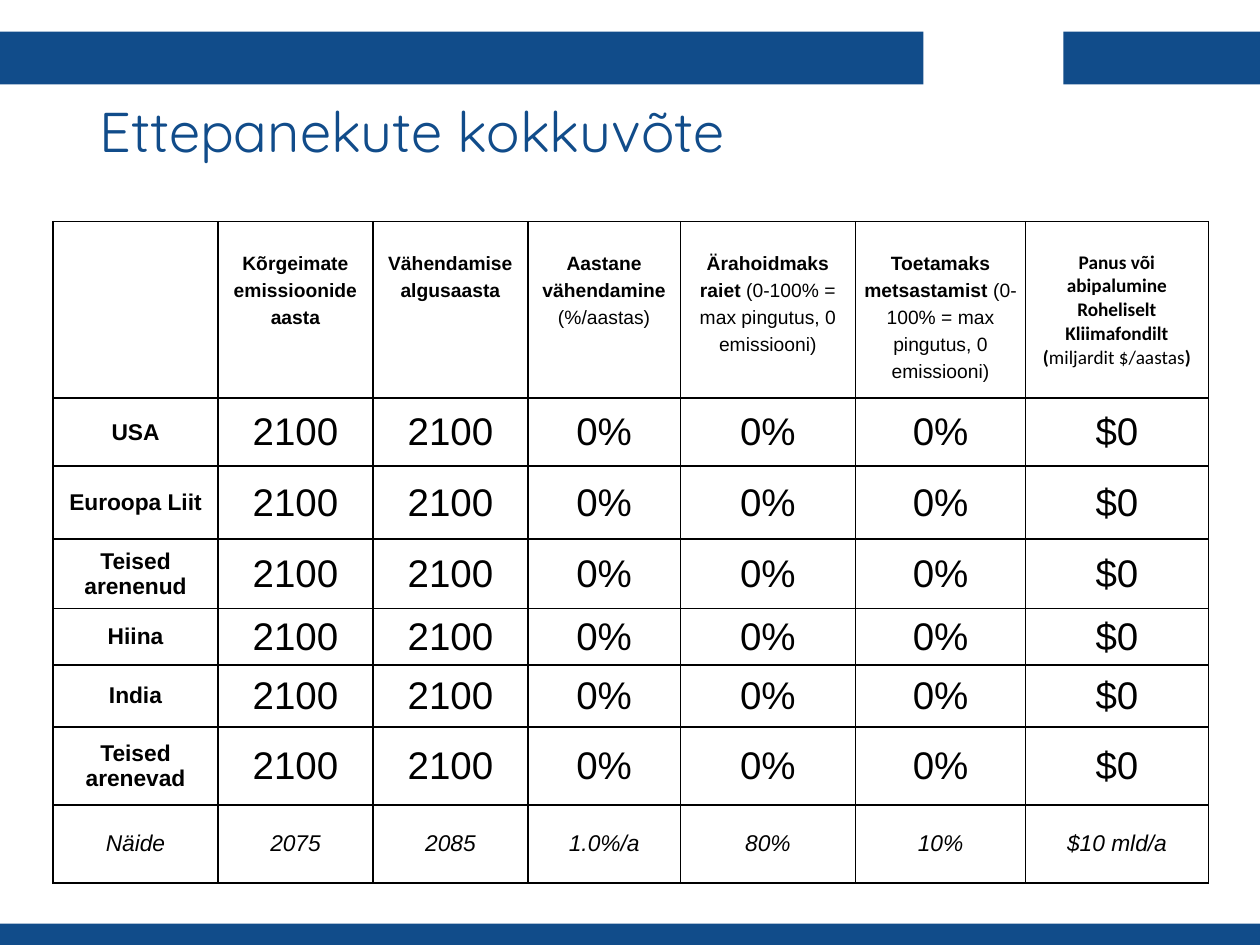
import pptx
import pptx.dml.color
import pptx.enum.shapes
import pptx.enum.text
import pptx.oxml
import pptx.util
from pptx.util import Inches

RGBColor = pptx.dml.color.RGBColor
BLUE = RGBColor(0x11, 0x4C, 0x8A)
BLACK = RGBColor(0, 0, 0)
WHITE = RGBColor(0xFF, 0xFF, 0xFF)
CENTER = pptx.enum.text.PP_ALIGN.CENTER
MIDDLE = pptx.enum.text.MSO_ANCHOR.MIDDLE
NS = "http://schemas.openxmlformats.org/drawingml/2006/main"


def add_run(p, text, size, font="Arial", color=BLACK, bold=False, italic=False):
    r = p.add_run()
    r.text = text
    r.font.size = pptx.util.Pt(size)
    r.font.name = font
    r.font.color.rgb = color
    r.font.bold = bold
    r.font.italic = italic


def style_cell(cell):
    """Give the cell a black 1 pt border on every side and a white fill."""
    tc_pr = cell._tc.get_or_add_tcPr()
    for side in "LRTB":
        tc_pr.append(pptx.oxml.parse_xml(
            f'<a:ln{side} xmlns:a="{NS}" w="12700"><a:solidFill>'
            f'<a:srgbClr val="{BLACK}"/></a:solidFill></a:ln{side}>'))
    cell.fill.solid()
    cell.fill.fore_color.rgb = WHITE


prs = pptx.Presentation()
prs.slide_width, prs.slide_height = Inches(10), Inches(7.5)
s = prs.slides.add_slide(prs.slide_layouts[5])

# Blue bars at the top and bottom
for left, top, width, height in [(0, 0.25, 7.33, 0.42), (8.44, 0.25, 1.56, 0.42),
                                 (0, 7.33, 10, 0.17)]:
    bar = s.shapes.add_shape(pptx.enum.shapes.MSO_SHAPE.RECTANGLE, Inches(left),
                             Inches(top), Inches(width), Inches(height))
    bar.shadow.inherit = False
    bar.fill.solid()
    bar.fill.fore_color.rgb = BLUE
    bar.line.fill.background()

# Title
title = s.shapes.title
title.left, title.top = Inches(0.69), Inches(0.73)
title.width, title.height = Inches(8.62), Inches(0.68)
tf = title.text_frame
tf.vertical_anchor = MIDDLE
p = tf.paragraphs[0]
p.alignment = pptx.enum.text.PP_ALIGN.LEFT
p.line_spacing = 0.9
add_run(p, "Ettepanekute kokkuvõte", 32, "Quicksand", BLUE)

# Proposal table: header runs are (text, bold)
EFFORT = ("(0-100% = max pingutus, 0 emissiooni)", False)
headers = [
    [],
    [("Kõrgeimate emissioonide aasta", True)],
    [("Vähendamise algusaasta", True)],
    [("Aastane vähendamine ", True), ("(%/aastas)", False)],
    [("Ärahoidmaks raiet ", True), EFFORT],
    [("Toetamaks metsastamist ", True), EFFORT],
    [("Panus või abipalumine Roheliselt Kliimafondilt (", True),
     ("miljardit $/aastas", False), (")", True)],
]
regions = ["USA", "Euroopa Liit", "Teised arenenud", "Hiina", "India",
           "Teised arenevad"]
defaults = ["2100", "2100", "0%", "0%", "0%", "$0"]
example = ["Näide", "2075", "2085", "1.0%/a", "80%", "10%", "$10 mld/a"]
rows = [[region] + defaults for region in regions] + [example]
col_widths = [1.31, 1.23, 1.23, 1.21, 1.39, 1.35, 1.45]
row_heights = [1.4, 0.54, 0.58, 0.55, 0.45, 0.49, 0.62, 0.62]

frame = s.shapes.add_table(len(row_heights), len(col_widths), Inches(0.42),
                           Inches(1.76), Inches(9.17), Inches(5.24))
table = frame.table
table.first_row = table.horz_banding = False
for column, width in zip(table.columns, col_widths):
    column.width = Inches(width)
for row, height in zip(table.rows, row_heights):
    row.height = Inches(height)

for cell in table.iter_cells():
    style_cell(cell)
    cell.vertical_anchor = MIDDLE
    cell.margin_left = cell.margin_right = Inches(0.08)
    cell.margin_top = cell.margin_bottom = Inches(0.04)
    cell.text_frame.paragraphs[0].alignment = CENTER

last = len(headers) - 1
for j, runs in enumerate(headers):
    cell = table.cell(0, j)
    p = cell.text_frame.paragraphs[0]
    if j < last:
        cell.vertical_anchor = pptx.enum.text.MSO_ANCHOR.TOP
        cell.margin_left = cell.margin_right = Inches(0.07)
        cell.margin_top, cell.margin_bottom = Inches(0.21), 0
        p.line_spacing = 1.25
    for text, bold in runs:
        add_run(p, text, 11, "Calibri" if j == last else "Arial", bold=bold)

for i, values in enumerate(rows, start=1):
    is_example = values is example
    for j, text in enumerate(values):
        p = table.cell(i, j).text_frame.paragraphs[0]
        add_run(p, text, 13 if is_example or j == 0 else 22,
                bold=j == 0 and not is_example, italic=is_example)

prs.save("out.pptx")
